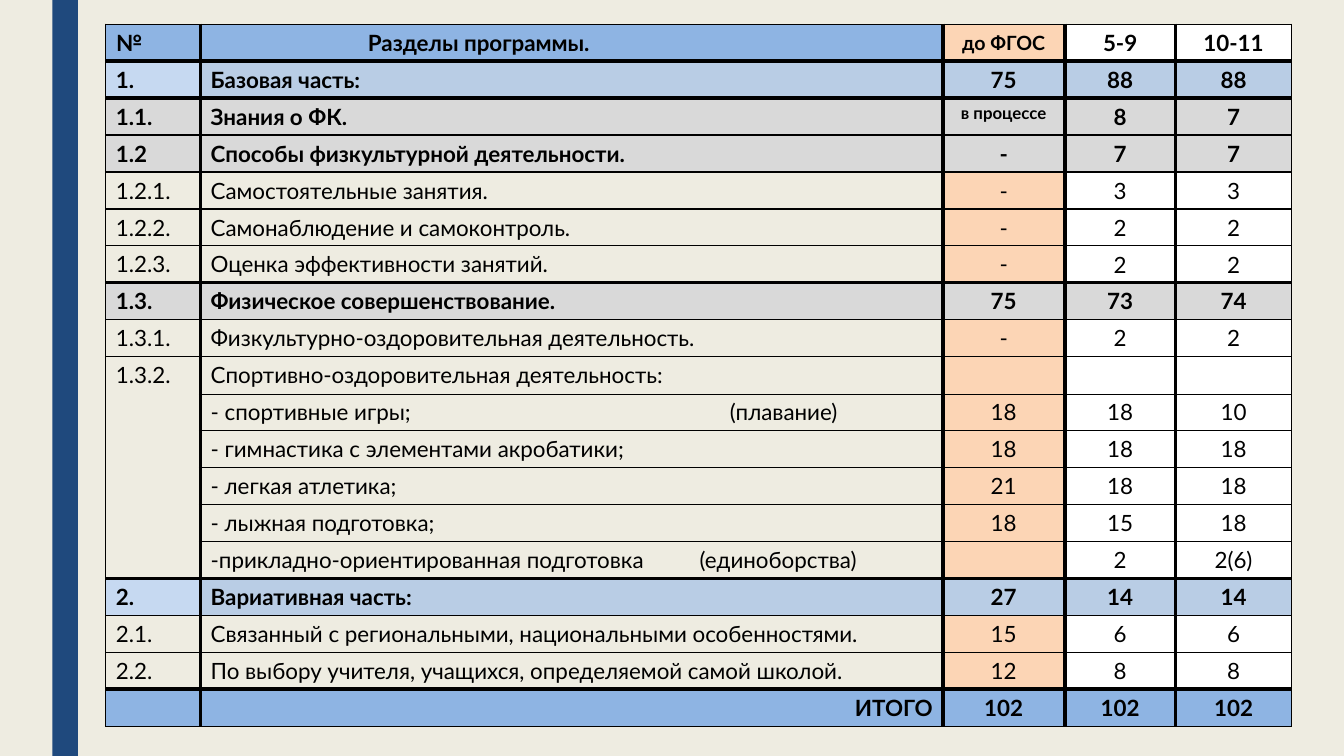
from collections import namedtuple
from dataclasses import dataclass

from lxml.etree import SubElement
from pptx import Presentation
from pptx.dml.color import RGBColor
from pptx.enum.shapes import MSO_SHAPE as Shape
from pptx.enum.text import MSO_ANCHOR as Anchor, PP_ALIGN as Align
from pptx.oxml.ns import qn
from pptx.util import Inches, Pt


@dataclass(frozen=True)
class Theme:
    font: str = "Lato"
    text: str = "000000"
    background: str = "EEECE1"
    bar: str = "1F497D"
    header: str = "8EB4E3"
    chapter_number: str = "C6D9F1"
    chapter: str = "B9CDE5"
    section: str = "D9D9D9"
    before: str = "FCD5B5"
    hours: str = "FFFFFF"
    body_size: float = 16
    label_size: float = 14
    note_size: float = 12
    thick: float = 3
    medium: float = 2.25
    thin: float = 1
    hairline: float = 0.25


THEME = Theme()
Row = namedtuple("Row", "kind rule cells")

# Fills of the five columns for each kind of row; None lets the slide show through.
FILLS = {
    "header": [THEME.header] * 2 + [THEME.before] + [THEME.hours] * 2,
    "chapter": [THEME.chapter_number] + [THEME.chapter] * 4,
    "section": [THEME.section] * 5,
    "topic": [None, None, THEME.before, THEME.hours, THEME.hours],
    "total": [THEME.header] * 5,
}
COLUMN_WIDTHS = [0.94, 7.36, 1.21, 1.1, 1.15]
TABLE_LEFT, TABLE_TOP, TABLE_HEIGHT = 1.05, 0.24, 6.97
HEADING_INDENT = 1.56
SPORT_ROWS = (9, 14)
TAB_STOPS = {10: 5.15, 14: 4.85}
SIZES = {(0, 2): THEME.label_size, (2, 2): THEME.note_size}

# The rule is the width of the line below the row.
ROWS = [
    Row("header", THEME.thick, ["№", "Разделы программы.", "до ФГОС", "5-9", "10-11"]),
    Row("chapter", THEME.thick, ["1.", "Базовая часть:", "75", "88", "88"]),
    Row("section", THEME.medium, ["1.1.", "Знания о ФК.", "в процессе", "8", "7"]),
    Row("section", THEME.thin, ["1.2", "Способы физкультурной деятельности.", "-", "7", "7"]),
    Row("topic", THEME.thin, ["1.2.1.", "Самостоятельные занятия.", "-", "3", "3"]),
    Row("topic", THEME.thin, ["1.2.2.", "Самонаблюдение и самоконтроль.", "-", "2", "2"]),
    Row("topic", THEME.medium, ["1.2.3.", "Оценка эффективности занятий.", "-", "2", "2"]),
    Row("section", THEME.thin, ["1.3.", "Физическое совершенствование.", "75", "73", "74"]),
    Row("topic", THEME.thin, ["1.3.1.", "Физкультурно-оздоровительная деятельность.", "-", "2", "2"]),
    Row("topic", THEME.hairline, ["1.3.2.", "Спортивно-оздоровительная деятельность:", "", "", ""]),
    Row("topic", THEME.hairline, ["", "- спортивные игры;\t(плавание)", "18", "18", "10"]),
    Row("topic", THEME.hairline, ["", "- гимнастика с элементами акробатики;", "18", "18", "18"]),
    Row("topic", THEME.hairline, ["", "- легкая атлетика;", "21", "18", "18"]),
    Row("topic", THEME.hairline, ["", "- лыжная подготовка;", "18", "15", "18"]),
    Row("topic", THEME.thick, ["", "-прикладно-ориентированная подготовка\t(единоборства)", "", "2", "2(6)"]),
    Row("chapter", THEME.thin, ["2.", "Вариативная часть:", "27", "14", "14"]),
    Row("topic", THEME.thin, ["2.1.", "Связанный с региональными, национальными особенностями.", "15", "6", "6"]),
    Row("topic", THEME.thick, ["2.2.", "По выбору учителя, учащихся, определяемой самой школой.", "12", "8", "8"]),
    Row("total", THEME.thin, ["", "ИТОГО", "102", "102", "102"]),
]


def set_fill(fill, color):
    if color is None:
        fill.background()
    else:
        fill.solid()
        fill.fore_color.rgb = RGBColor.from_string(color)


def add_bar(slide, width, height):
    bar = slide.shapes.add_shape(Shape.RECTANGLE, int(width * 0.039), 0, int(width * 0.019), height)
    bar.shadow.inherit = False
    set_fill(bar.fill, THEME.bar)
    bar.line.fill.background()


def set_borders(cell, widths):
    """Draw the cell's lines; widths are left, right, top and bottom in points."""
    properties = cell._tc.get_or_add_tcPr()
    for side, width in zip("LRTB", widths):
        line = SubElement(properties, qn(f"a:ln{side}"), w=str(Pt(width)))
        SubElement(SubElement(line, qn("a:solidFill")), qn("a:srgbClr"), val=THEME.text)


def border_widths(row, column):
    left = THEME.thick if column else THEME.thin
    right = THEME.thick if column < len(COLUMN_WIDTHS) - 1 else THEME.thin
    top = ROWS[row - 1].rule if row else THEME.thin
    last_row = SPORT_ROWS[1] if (row, column) == (SPORT_ROWS[0], 0) else row
    return left, right, top, ROWS[last_row].rule


def alignment(kind, column):
    if column > 1:
        return Align.CENTER
    return Align.RIGHT if (kind, column) == ("total", 1) else Align.LEFT


def write_text(cell, row, column):
    kind = ROWS[row].kind
    paragraph = cell.text_frame.paragraphs[0]
    paragraph.text = ROWS[row].cells[column]
    paragraph.alignment = alignment(kind, column)
    if column == 1 and kind == "header":
        paragraph._p.get_or_add_pPr().set("marL", str(Inches(HEADING_INDENT)))
    if column == 1 and row in TAB_STOPS:
        tabs = SubElement(paragraph._p.get_or_add_pPr(), qn("a:tabLst"))
        SubElement(tabs, qn("a:tab"), pos=str(Inches(TAB_STOPS[row])), algn="l")
    font = paragraph.font
    font.name = THEME.font
    font.size = Pt(SIZES.get((row, column), THEME.body_size))
    font.bold = kind != "topic"
    font.color.rgb = RGBColor.from_string(THEME.text)
    centred = column > 2 or (kind == "header" and column > 0)
    cell.vertical_anchor = Anchor.MIDDLE if centred else Anchor.TOP
    if not paragraph.text:
        cell.margin_top = cell.margin_bottom = 0


def add_programme_table(slide):
    table = slide.shapes.add_table(
        len(ROWS), len(COLUMN_WIDTHS), Inches(TABLE_LEFT), Inches(TABLE_TOP),
        Inches(sum(COLUMN_WIDTHS)), Inches(TABLE_HEIGHT)).table
    table.first_row = table.horz_banding = False
    for column, width in zip(table.columns, COLUMN_WIDTHS):
        column.width = Inches(width)
    first, last = SPORT_ROWS
    table.cell(first, 0).merge(table.cell(last, 0))
    for row, content in enumerate(ROWS):
        for column, color in enumerate(FILLS[content.kind]):
            cell = table.cell(row, column)
            set_borders(cell, border_widths(row, column))
            set_fill(cell.fill, color)
            write_text(cell, row, column)


def main():
    presentation = Presentation()
    presentation.slide_width, presentation.slide_height = Inches(13.33), Inches(7.5)
    slide = presentation.slides.add_slide(presentation.slide_layouts[6])
    set_fill(slide.background.fill, THEME.background)
    add_bar(slide, presentation.slide_width, presentation.slide_height)
    add_programme_table(slide)
    presentation.save("out.pptx")


if __name__ == "__main__":
    main()
